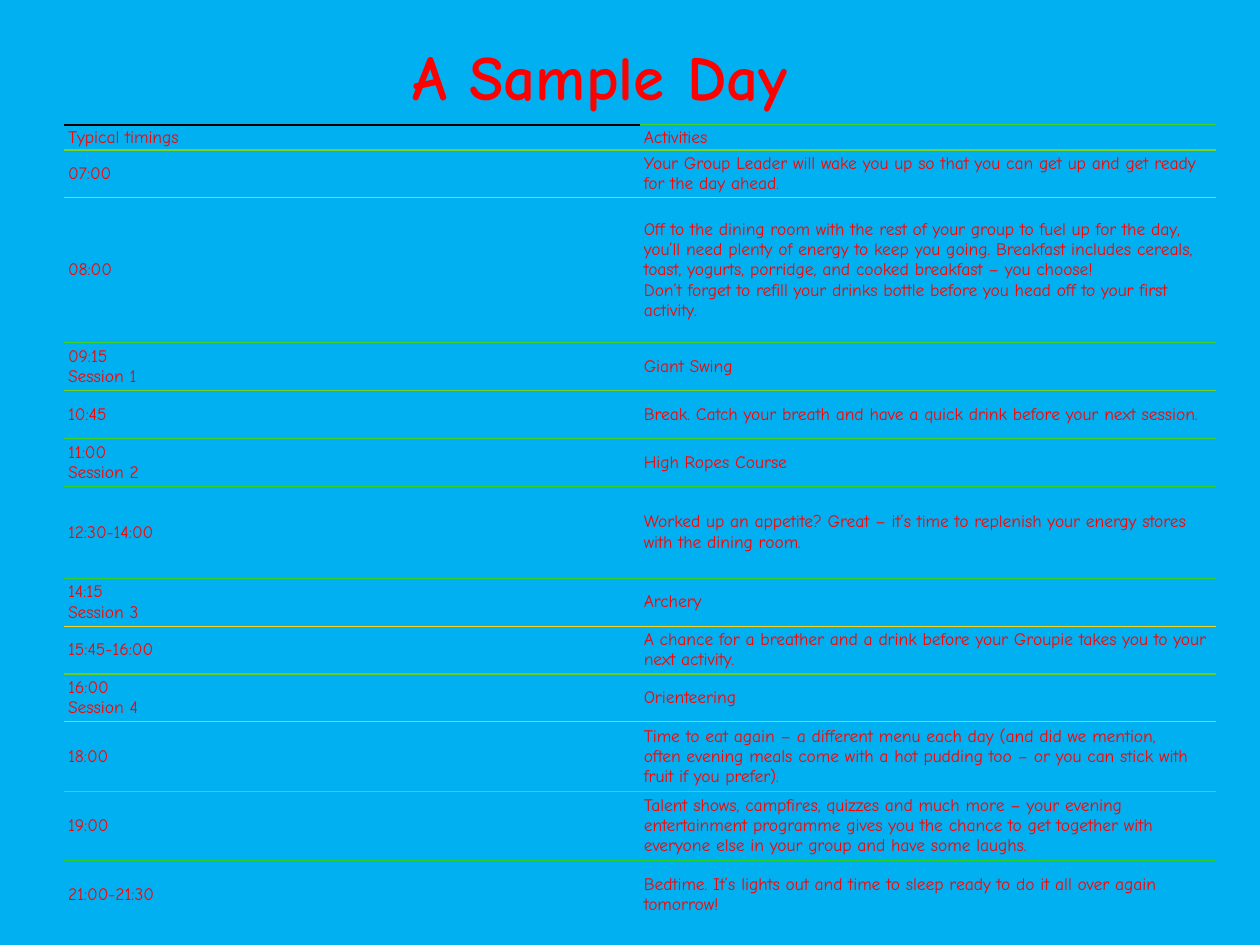
from lxml.etree import SubElement
from pptx import Presentation
from pptx.dml.color import RGBColor
from pptx.enum.text import MSO_ANCHOR, PP_ALIGN
from pptx.oxml.ns import qn
from pptx.util import Inches, Pt

FONT = "Comic Neue"
RED = RGBColor(0xFF, 0x00, 0x00)
SKY = RGBColor(0x00, 0xB0, 0xF0)
BLACK = RGBColor(0x00, 0x00, 0x00)
GREEN = RGBColor(0x40, 0xD2, 0x22)
LEAF = RGBColor(0x78, 0xD2, 0x22)
LIME = RGBColor(0xC0, 0xD5, 0x22)
EMERALD = RGBColor(0x30, 0xCF, 0x22)
YELLOW = RGBColor(0xF8, 0xD5, 0x22)
GRASS = RGBColor(0x68, 0xCF, 0x22)
BRIGHT = RGBColor(0x28, 0xD1, 0x22)
NO_GRID_STYLE = "{2D5ABB26-0587-4C30-8999-92F81FD0307C}"

TITLE = "A Sample Day "
# time, activity, row height in inches, colour of the line below
SCHEDULE = [
    ("Typical timings", "Activities", 0.2, LEAF),
    ("07:00", "Your Group Leader will\u00a0wake you up\u00a0so that you can get up "
     "and get ready for the day ahead.", 0.38, LIME),
    ("08:00", "Off to the dining room with the rest of your group to fuel up for "
     "the day, you’ll need plenty of energy to keep you going.\u00a0Breakfast\u00a0"
     "includes cereals, toast, yogurts, porridge, and cooked breakfast – you choose!\n"
     "Don’t forget to refill your drinks bottle before you head off to your first "
     "activity.", 1.15, GREEN),
    ("09:15\nSession 1", "Giant Swing", 0.38, LEAF),
    ("10:45", "Break. Catch your breath and have a quick drink before your next "
     "session.", 0.38, GREEN),
    ("11:00\nSession 2", "High Ropes Course ", 0.38, EMERALD),
    ("12:30-14:00", "Worked up an appetite?\u00a0Great – it’s time to replenish your "
     "energy stores with the dining room.", 0.73, EMERALD),
    ("14:15\nSession 3", "Archery", 0.38, YELLOW),
    ("15:45-16:00", "A chance for a\u00a0breather and a drink\u00a0before your Groupie "
     "takes you to your next activity.", 0.38, GRASS),
    ("16:00\nSession 4", "Orienteering ", 0.38, LIME),
    ("18:00", "Time to eat again – a different menu each day (and did we mention, "
     "often\u00a0evening meals\u00a0come with a hot pudding too – or you can stick "
     "with fruit if you prefer).", 0.55, LEAF),
    ("19:00", "Talent shows, campfires, quizzes and much more – your\u00a0evening "
     "entertainment\u00a0programme gives you the chance to get together with everyone "
     "else in your group and have some laughs.", 0.55, BRIGHT),
    ("21:00-21:30", "Bedtime.\u00a0It’s lights out and time to sleep ready to do it "
     "all over again tomorrow!", 0.55, None),
]
COL_WIDTH = 4.57


def add_text(p, text, size, bold=False):
    """Add red text to a paragraph, with a line break at each newline."""
    for i, line in enumerate(text.split("\n")):
        if i:
            p.add_line_break()
        r = p.add_run()
        r.text = line
        r.font.name, r.font.size, r.font.bold = FONT, Pt(size), bold
        r.font.color.rgb = RED


def add_border(cell, side, color, width):
    """Draw one side of a cell as a solid line."""
    ln = SubElement(cell._tc.get_or_add_tcPr(), qn("a:" + side), w=str(Pt(width)))
    fill = SubElement(ln, qn("a:solidFill"))
    SubElement(fill, qn("a:srgbClr"), val=str(color))


def fill_cell(cell, text, above, below):
    """Set the text, margins and lines of one cell."""
    cell.margin_left = cell.margin_right = Inches(0.03)
    cell.margin_top = cell.margin_bottom = Inches(0.01)
    cell.vertical_anchor = MSO_ANCHOR.MIDDLE
    add_text(cell.text_frame.paragraphs[0], text, 10)
    add_border(cell, "lnT", above, 1 if above == BLACK else 0.75)
    if below is not None:
        add_border(cell, "lnB", below, 0.75)
    cell.fill.background()


def add_title(s):
    """Add the centred heading."""
    sp = s.shapes.add_textbox(Inches(0.35), Inches(-0.03), Inches(9), Inches(1.25))
    tf = sp.text_frame
    tf.word_wrap = True
    tf.vertical_anchor = MSO_ANCHOR.MIDDLE
    p = tf.paragraphs[0]
    p.alignment = PP_ALIGN.CENTER
    add_text(p, TITLE, 36, bold=True)


def add_schedule(s):
    """Add the timetable, each row sharing its top line with the row above."""
    height = sum(row[2] for row in SCHEDULE)
    frame = s.shapes.add_table(len(SCHEDULE), 2, Inches(0.51), Inches(0.99),
                               Inches(2 * COL_WIDTH), Inches(height))
    table = frame.table
    table._tbl.tblPr.find(qn("a:tableStyleId")).text = NO_GRID_STYLE
    table.first_row = table.horz_banding = False
    for col in table.columns:
        col.width = Inches(COL_WIDTH)
    above = (BLACK, GREEN)
    for i, (time, activity, row_height, below) in enumerate(SCHEDULE):
        table.rows[i].height = Inches(row_height)
        for j, text in enumerate((time, activity)):
            fill_cell(table.cell(i, j), text, above[j], below)
        above = (below, below)


prs = Presentation()
prs.slide_width, prs.slide_height = Inches(10), Inches(7.5)
s = prs.slides.add_slide(prs.slide_layouts[6])
s.background.fill.solid()
s.background.fill.fore_color.rgb = SKY
add_title(s)
add_schedule(s)
prs.save("out.pptx")
